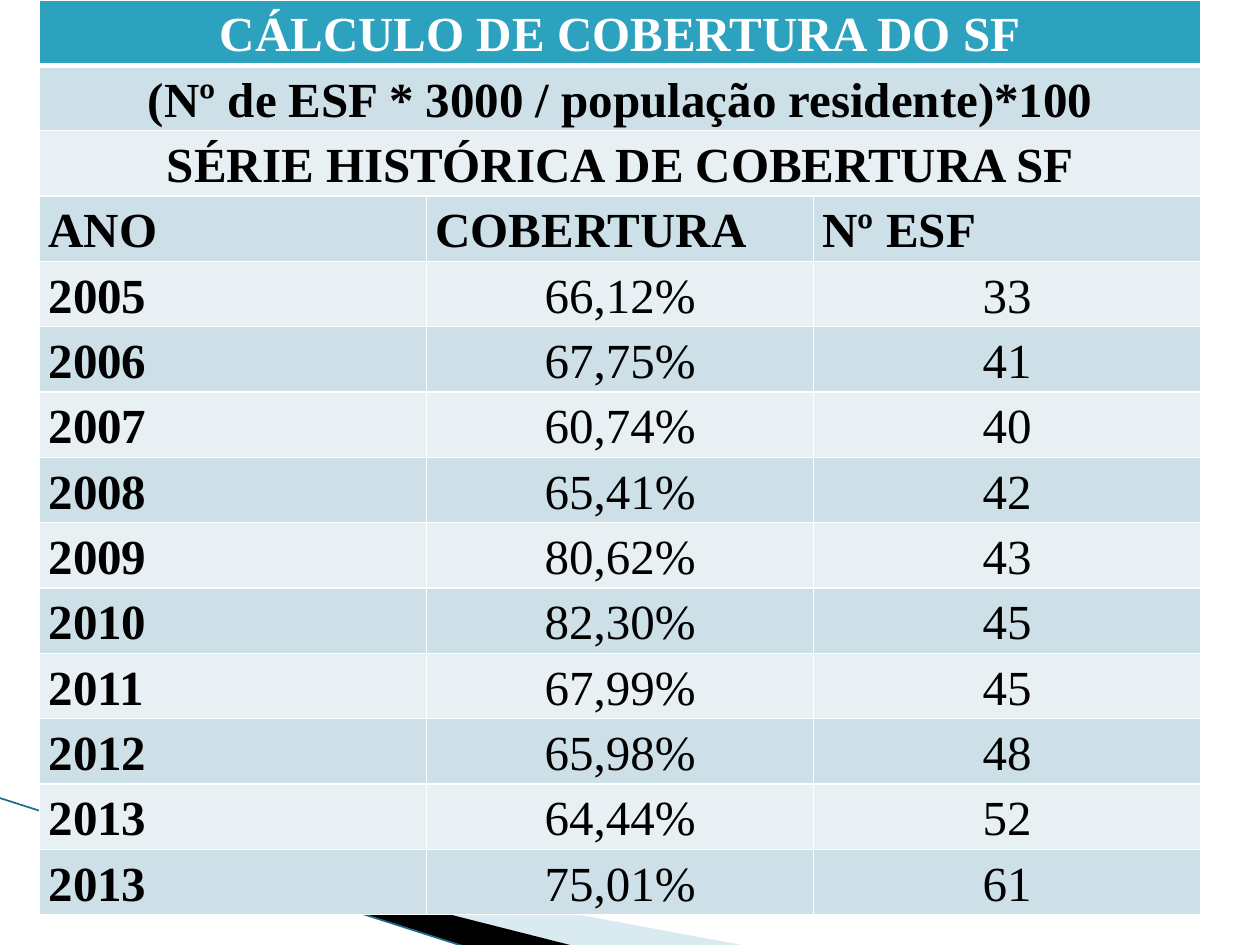
from dataclasses import dataclass
from lxml.etree import SubElement as Sub
from pptx import Presentation
from pptx.dml.color import RGBColor as Rgb
from pptx.enum.shapes import MSO_CONNECTOR as Link
from pptx.enum.text import PP_ALIGN as Align
from pptx.oxml import parse_xml
from pptx.oxml.ns import nsdecls, qn
from pptx.util import Cm, Pt

HEADS = [
    "CÁLCULO DE COBERTURA DO SF",
    "(Nº de ESF * 3000 / população residente)*100",
    "SÉRIE HISTÓRICA DE COBERTURA SF",
]
LABELS = ("ANO", "COBERTURA", "Nº ESF")
YEARS = [
    ("2005", "66,12%", "33"),
    ("2006", "67,75%", "41"),
    ("2007", "60,74%", "40"),
    ("2008", "65,41%", "42"),
    ("2009", "80,62%", "43"),
    ("2010", "82,30%", "45"),
    ("2011", "67,99%", "45"),
    ("2012", "65,98%", "48"),
    ("2013", "64,44%", "52"),
    ("2013", "75,01%", "61"),
]


@dataclass(frozen=True)
class Theme:
    font: str = "Times New Roman"
    size: int = 28
    head: str = "2DA2BF"
    dark: str = "CDE0E8"
    light: str = "E8F0F4"
    white: str = "FFFFFF"
    black: str = "000000"
    wave: str = "A0CBDC"
    line: str = "1A6F86"


THEME = Theme()
WAVES = [
    ([(1.4, 16.54), (15.11, 19.08), (11.58, 19.08), (1.4, 16.51)],
     (1.98, 13.89, 10.57, 4.01), THEME.wave, 40),
    ([(1.35, 16.48), (11.61, 19.08), (9.45, 19.1), (1.37, 16.51)],
     (-0.15, 16.08, 10.57, 2.34), THEME.black, 100),
]
EDGE = (-0.03, 16.08, 9.42, 19.1)
LEFT, WIDE, TALL = 0.8, 7.8, 18.45


def set_frame(wave, frame):
    left, top, wide, high = map(Cm, frame)
    shift = {"x": wave.left - left, "y": wave.top - top}
    for point in wave._element.iter(qn("a:pt")):
        for axis, gap in shift.items():
            point.set(axis, str(int(point.get(axis)) + gap))
    for trace in wave._element.iter(qn("a:path")):
        trace.set("w", str(wide))
        trace.set("h", str(high))
    wave.left, wave.top, wave.width, wave.height = left, top, wide, high


def add_wave(shapes, points, frame, color, alpha):
    first, *rest = [(Cm(x), Cm(y)) for x, y in points]
    pen = shapes.build_freeform(*first)
    pen.add_line_segments(rest)
    wave = pen.convert_to_shape()
    set_frame(wave, frame)
    wave.shadow.inherit = False
    wave.line.fill.background()
    wave.fill.solid()
    wave.fill.fore_color.rgb = Rgb.from_string(color)
    if alpha < 100:
        tone = wave._element.spPr.find(f".//{qn('a:srgbClr')}")
        Sub(tone, qn("a:alpha"), val=str(alpha * 1000))


def add_edge(shapes):
    edge = shapes.add_connector(Link.STRAIGHT, *map(Cm, EDGE))
    edge.line.color.rgb = Rgb.from_string(THEME.line)
    edge.line.width = Pt(0.95)
    Sub(edge._element.spPr, qn("a:effectLst"))


def set_rules(cell, top, base):
    props = cell._tc.get_or_add_tcPr()
    for i, (side, width) in enumerate(zip("LRTB", (1, 1, top, base))):
        props.insert(i, parse_xml(
            f'<a:ln{side} {nsdecls("a")} w="{Pt(width)}"><a:solidFill>'
            f'<a:srgbClr val="{THEME.white}"/></a:solidFill></a:ln{side}>'))


def set_cell(cell, text, row, col):
    fill = THEME.head if row == 0 else THEME.dark if row % 2 else THEME.light
    cell.fill.solid()
    cell.fill.fore_color.rgb = Rgb.from_string(fill)
    cell.margin_left = cell.margin_right = Cm(0.18)
    cell.margin_top = cell.margin_bottom = 0
    set_rules(cell, 3 if row == 1 else 1, 3 if row == 0 else 1)
    if not text:
        return
    para = cell.text_frame.paragraphs[0]
    para.text = text
    span = row < len(HEADS)
    value = row > len(HEADS) and col > 0
    para.alignment = Align.CENTER if span or value else Align.JUSTIFY
    para.line_spacing = 1.15
    para.space_after = Pt(10 if row < 12 else 0)
    font = para.font
    font.name, font.size, font.bold = THEME.font, Pt(THEME.size), not value
    font.color.rgb = Rgb.from_string(THEME.black if row else THEME.white)


def add_grid(shapes):
    rows = [(head, "", "") for head in HEADS] + [LABELS] + YEARS
    count = len(LABELS)
    grid = shapes.add_table(len(rows), count, Cm(LEFT), 0,
                            Cm(WIDE * count), Cm(TALL)).table
    for col in grid.columns:
        col.width = Cm(WIDE)
    for r, texts in enumerate(rows):
        grid.rows[r].height = Cm(TALL / len(rows))
        for c, text in enumerate(texts):
            set_cell(grid.cell(r, c), text, r, c)
        if r < len(HEADS):
            grid.cell(r, 0).merge(grid.cell(r, count - 1))


def main():
    deck = Presentation()
    deck.slide_width, deck.slide_height = Cm(25.4), Cm(19.05)
    shapes = deck.slides.add_slide(deck.slide_layouts[6]).shapes
    for wave in WAVES:
        add_wave(shapes, *wave)
    add_edge(shapes)
    add_grid(shapes)
    deck.save("out.pptx")


if __name__ == "__main__":
    main()
